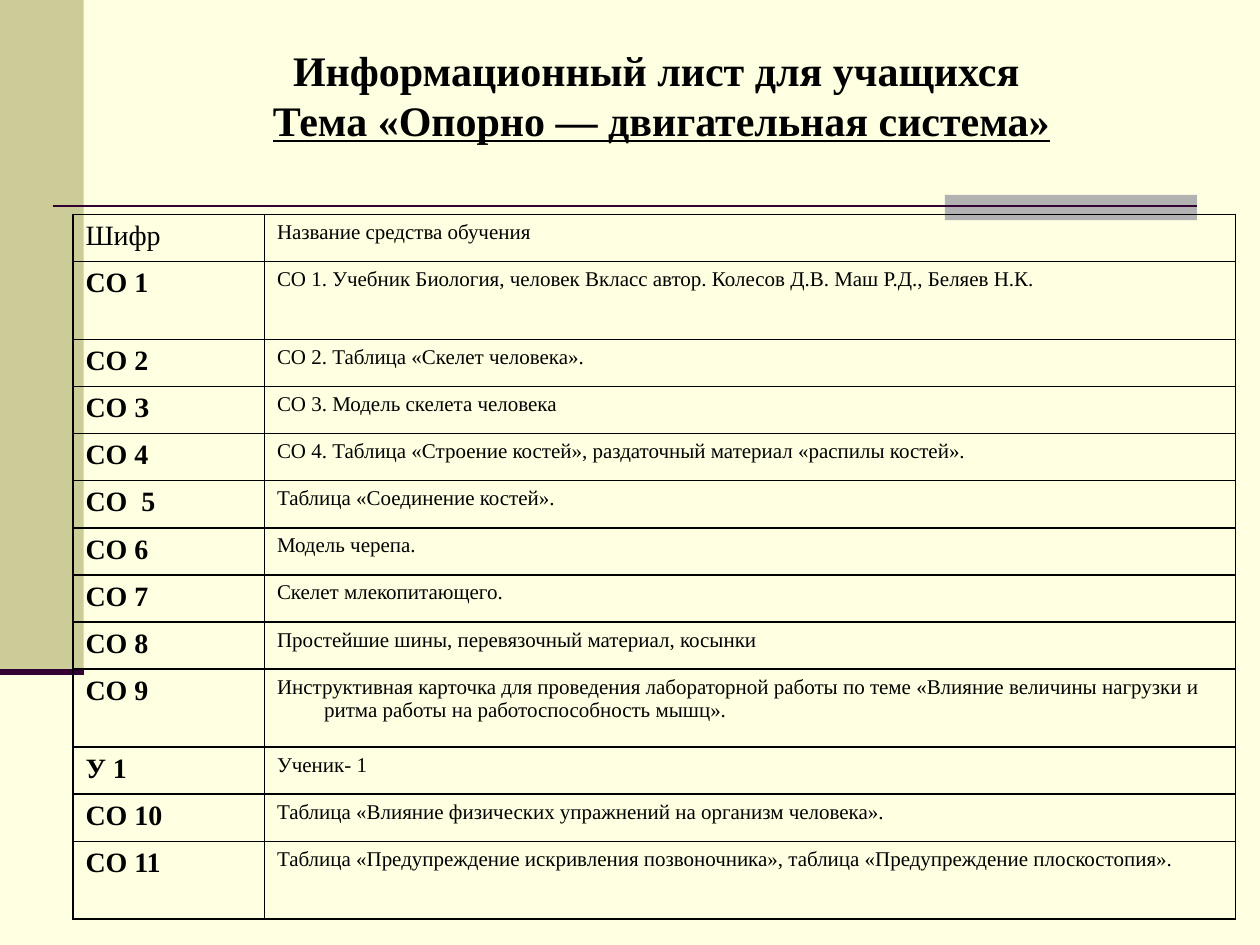
"""Build the information sheet slide on the musculoskeletal system."""
from typing import NamedTuple

from lxml.etree import SubElement as Sub
from pptx import Presentation
from pptx.dml.color import RGBColor as Rgb
from pptx.enum.shapes import MSO_CONNECTOR as Link, MSO_SHAPE as Kind
from pptx.enum.text import MSO_ANCHOR as Anchor, PP_ALIGN as Align
from pptx.oxml.ns import qn
from pptx.util import Cm, Pt

FACE = "Times New Roman"
INK = "000000"
PLUM = "330033"
LOW, TALL = 0.95, 1.57
COLS = (3.86, 19.58)


class Box(NamedTuple):
    left: float
    top: float
    width: float
    height: float
    fill: str


class Rule(NamedTuple):
    left: float
    right: float
    top: float
    weight: float


class Row(NamedTuple):
    code: str
    text: str
    height: float = LOW
    bold: bool = True


BOXES = (
    Box(0, 0, 1.69, 13.55, "CCCC99"),
    Box(19.05, 3.93, 5.08, 0.51, "B2B2B2"),
)
RULES = (Rule(1.06, 24.13, 4.15, 1.5), Rule(0, 1.69, 13.55, 3.5))
ROWS = (
    Row("Шифр", "Название средства обучения", bold=False),
    Row("СО 1", "СО 1. Учебник Биология, человек Вкласс автор. "
        "Колесов Д.В. Маш Р.Д., Беляев Н.К.", TALL),
    Row("СО 2", "СО 2. Таблица «Скелет человека»."),
    Row("СО З", "СО 3. Модель скелета человека"),
    Row("СО 4", "СО 4. Таблица «Строение костей», "
        "раздаточный материал «распилы костей»."),
    Row("СО  5", "Таблица «Соединение костей»."),
    Row("СО 6", "Модель черепа."),
    Row("СО 7", "Скелет млекопитающего."),
    Row("СО 8", "Простейшие шины, перевязочный материал, косынки"),
    Row("СО 9", "Инструктивная карточка для проведения лабораторной работы "
        "по теме «Влияние величины нагрузки и ритма работы "
        "на работоспособность мышц».", TALL),
    Row("У 1", "Ученик- 1"),
    Row("СО 10", "Таблица «Влияние физических упражнений "
        "на организм человека»."),
    Row("СО 11", "Таблица «Предупреждение искривления позвоночника», "
        "таблица «Предупреждение плоскостопия».", TALL),
)


def paint(fill, tone: str) -> None:
    fill.solid()
    fill.fore_color.rgb = Rgb.from_string(tone)


def style(font, size: int, bold: bool) -> None:
    font.name, font.size, font.bold = FACE, Pt(size), bold
    paint(font.fill, INK)


def draw_box(slide, box: Box) -> None:
    shape = slide.shapes.add_shape(Kind.RECTANGLE, *map(Cm, box[:4]))
    shape.shadow.inherit = False
    paint(shape.fill, box.fill)
    shape.line.fill.background()


def draw_rule(slide, rule: Rule) -> None:
    line = slide.shapes.add_connector(
        Link.STRAIGHT, Cm(rule.left), Cm(rule.top),
        Cm(rule.right), Cm(rule.top))
    paint(line.line.fill, PLUM)
    line.line.width = Pt(rule.weight)
    Sub(line._element.spPr, qn("a:effectLst"))


def draw_title(slide) -> None:
    title = slide.shapes.title
    title.left, title.top = Cm(2.54), Cm(0.33)
    title.width, title.height = Cm(21.59), Cm(3.15)
    frame = title.text_frame
    frame.vertical_anchor = Anchor.MIDDLE
    par = frame.paragraphs[0]
    par.alignment = Align.CENTER
    style(par.font, 24, True)
    par.add_run().text = "Информационный лист для учащихся "
    par.add_line_break()
    topic = par.add_run()
    topic.text = "Тема «Опорно — двигательная система»"
    topic.font.underline = True
    for run in par.runs:
        style(run.font, 24, True)


def fill_cell(cell, text: str, size: int, bold: bool) -> None:
    cell.text = text
    par = cell.text_frame.paragraphs[0]
    style(par.font, size, bold)
    props = par._p.get_or_add_pPr()
    props.set("marL", str(Cm(0.95)))
    props.set("indent", str(Cm(-0.95)))
    edges = cell._tc.get_or_add_tcPr()
    for side in "LRTB":
        edge = Sub(edges, qn(f"a:ln{side}"), w=str(Pt(1)))
        tone = Sub(edge, qn("a:solidFill"))
        Sub(tone, qn("a:srgbClr"), val=INK)
    cell.fill.background()


def draw_table(slide) -> None:
    high = sum(row.height for row in ROWS)
    table = slide.shapes.add_table(
        len(ROWS), len(COLS), Cm(1.47), Cm(4.32),
        Cm(sum(COLS)), Cm(high)).table
    table.first_row = table.horz_banding = False
    for col, width in zip(table.columns, COLS):
        col.width = Cm(width)
    for line, row in zip(table.rows, ROWS):
        line.height = Cm(row.height)
        fill_cell(line.cells[0], row.code, 16, row.bold)
        fill_cell(line.cells[1], row.text, 12, False)


def main() -> None:
    deck = Presentation()
    deck.slide_width, deck.slide_height = Cm(25.4), Cm(19.05)
    slide = deck.slides.add_slide(deck.slide_layouts[5])
    paint(slide.background.fill, "FFFFE1")
    for box in BOXES:
        draw_box(slide, box)
    for rule in RULES:
        draw_rule(slide, rule)
    draw_table(slide)
    draw_title(slide)
    deck.save("out.pptx")


if __name__ == "__main__":
    main()
